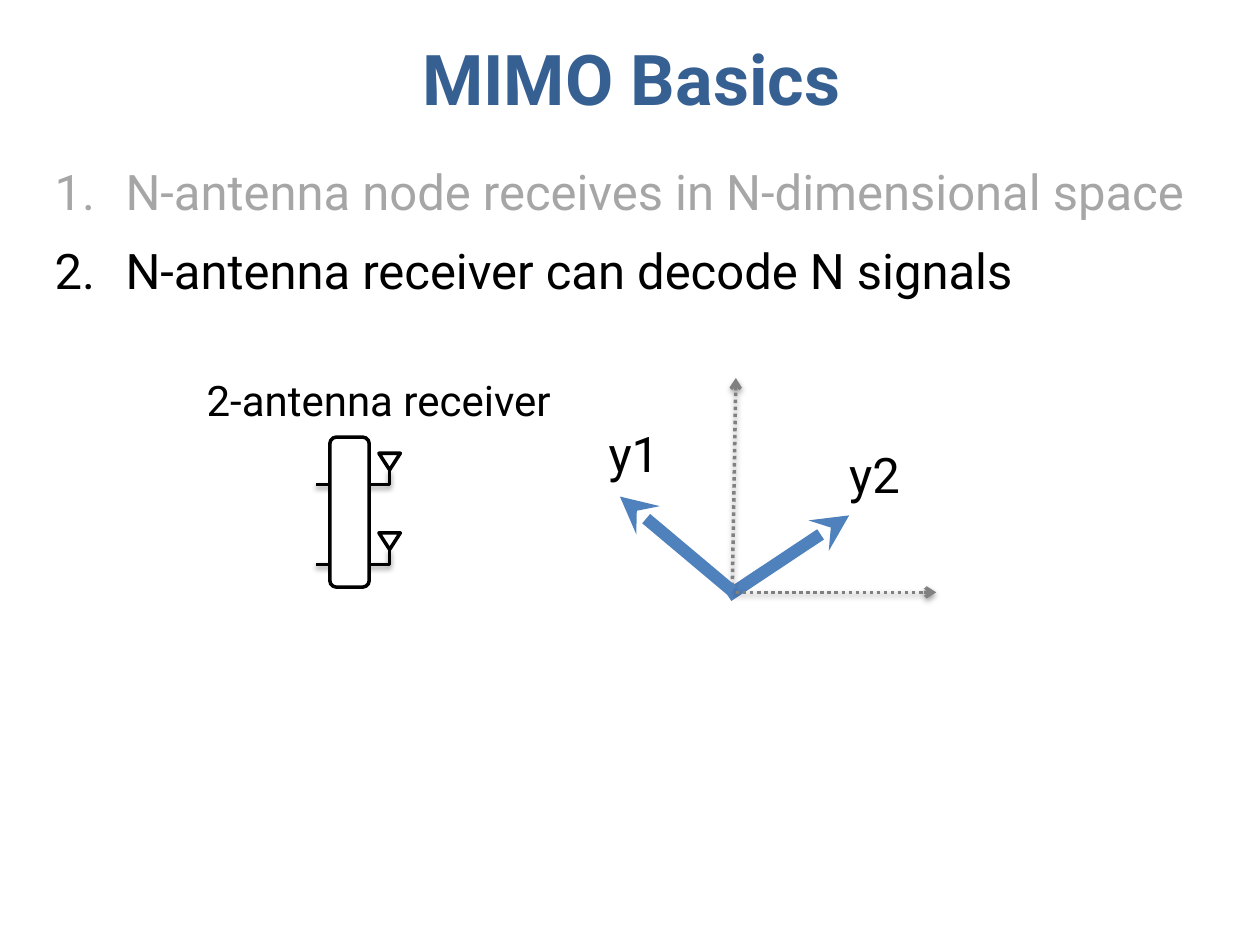
"""Builds the MIMO basics slide: two statements, a receiver and its signal space."""
from dataclasses import dataclass

from lxml.etree import SubElement as Sub
from pptx import Presentation
from pptx.dml.color import RGBColor as Rgb
from pptx.enum.dml import MSO_LINE as Dash
from pptx.enum.shapes import MSO_CONNECTOR as Link, MSO_SHAPE as Shape
from pptx.enum.text import MSO_ANCHOR as Anchor, MSO_AUTO_SIZE as Fit, PP_ALIGN as Align
from pptx.oxml.ns import qn
from pptx.util import Pt


@dataclass(frozen=True)
class Theme:
    font: str = "Roboto"
    head: str = "376092"
    dim: str = "A6A6A6"
    ink: str = "000000"
    paper: str = "FFFFFF"
    axis: str = "808080"
    beam: str = "4F81BD"
    title: float = 40
    body: float = 28
    note: float = 24
    thin: float = 2
    thick: float = 7


T = Theme()


def style(par, text, size, tint, bold=False):
    par.text = text
    font = par.font
    font.name, font.size, font.bold = T.font, Pt(size), bold
    font.color.rgb = Rgb.from_string(tint)


def indent(par, size):
    par.space_before = Pt(12)
    prop = par._p.get_or_add_pPr()
    prop.set("marL", str(Pt(size)))
    prop.set("indent", str(-Pt(size)))
    return prop


def place(shape, left, top, width, height):
    shape.left, shape.top = Pt(left), Pt(top)
    shape.width, shape.height = Pt(width), Pt(height)
    shape.text_frame.auto_size = Fit.NONE
    return shape.text_frame


def add_title(slide, text):
    frame = place(slide.shapes.title, 1.5, 0, 718.5, 88.5)
    frame.vertical_anchor = Anchor.MIDDLE
    par = frame.paragraphs[0]
    style(par, text, T.title, T.head, True)
    par.alignment = Align.CENTER


def add_list(slide, items):
    frame = place(slide.placeholders[1], 24, 88.5, 684, 420)
    for i, (text, tint) in enumerate(items):
        par = frame.add_paragraph() if i else frame.paragraphs[0]
        style(par, text, T.body, tint)
        prop = indent(par, 40.5)
        mark = prop.makeelement(qn("a:buAutoNum"), {"type": "arabicPeriod"})
        prop.insert_element_before(mark, "a:tabLst", "a:defRPr", "a:extLst")


def add_label(slide, text, left, top, width, size):
    box = slide.shapes.add_textbox(0, 0, 0, 0)
    frame = place(box, left, top, width, 60)
    frame.word_wrap = True
    par = frame.paragraphs[0]
    style(par, text, size, T.ink)
    par.alignment = Align.CENTER
    indent(par, 27)


def add_part(slide, kind, left, top, width, height, turn=0):
    part = slide.shapes.add_shape(kind, Pt(left), Pt(top), Pt(width), Pt(height))
    part.shadow.inherit = False
    part.rotation = turn
    part.fill.solid()
    part.fill.fore_color.rgb = Rgb.from_string(T.paper)
    part.line.color.rgb = Rgb.from_string(T.ink)
    part.line.width = Pt(T.thin)


def add_line(slide, start, end, tint, width, kind=Link.STRAIGHT, shade=True):
    line = slide.shapes.add_connector(kind, *map(Pt, start + end))
    line.line.color.rgb = Rgb.from_string(tint)
    line.line.width = Pt(width)
    fx = Sub(line._element.spPr, qn("a:effectLst"))
    if shade:
        drop = Sub(fx, qn("a:outerShdw"), blurRad=str(Pt(3.15)), dist=str(Pt(1.57)),
                   dir="5400000", rotWithShape="0")
        tone = Sub(drop, qn("a:srgbClr"), val=T.ink)
        Sub(tone, qn("a:alpha"), val="38000")
    return line


def add_tip(line, kind):
    Sub(line.line._get_or_add_ln(), qn("a:tailEnd"), type=kind)


def add_wire(slide, left, low):
    wire = add_line(slide, (left, low), (left + 42, low - 8.5), T.ink, T.thin, Link.ELBOW)
    wire._element.spPr.find(qn("a:prstGeom")).set("prst", "bentConnector2")


def add_axis(slide, start, end):
    axis = add_line(slide, start, end, T.axis, T.thin)
    axis.line.dash_style = Dash.ROUND_DOT
    add_tip(axis, "arrow")


def add_beam(slide, start, end):
    add_tip(add_line(slide, start, end, T.beam, T.thick, shade=False), "stealth")


def add_node(slide):
    for low in (322.5, 277):
        add_part(slide, Shape.ISOSCELES_TRIANGLE, 216.5, low - 18, 12.25, 9.5, 180)
        add_wire(slide, 180.5, low)
    add_part(slide, Shape.ROUNDED_RECTANGLE, 188.5, 249.75, 22.5, 85.75)
    add_label(slide, "2-antenna receiver", 95.75, 210.25, 241.25, T.note)


def add_space(slide):
    add_beam(slide, (416, 340.5), (485.25, 294.5))
    add_axis(slide, (418.5, 335), (420.5, 216))
    add_axis(slide, (420.5, 338.5), (535, 338.5))
    add_beam(slide, (418.5, 337.75), (354.25, 283.75))
    add_label(slide, "y1", 326.25, 238.25, 72, T.body)
    add_label(slide, "y2", 463.75, 250.5, 72, T.body)


def main():
    deck = Presentation()
    deck.slide_width, deck.slide_height = Pt(720), Pt(540)
    slide = deck.slides.add_slide(deck.slide_layouts[1])
    add_title(slide, "MIMO Basics")
    add_list(slide, [
        ("N-antenna node receives in N-dimensional space", T.dim),
        ("N-antenna receiver can decode N signals", T.ink),
    ])
    add_node(slide)
    add_space(slide)
    deck.save("out.pptx")


if __name__ == "__main__":
    main()
